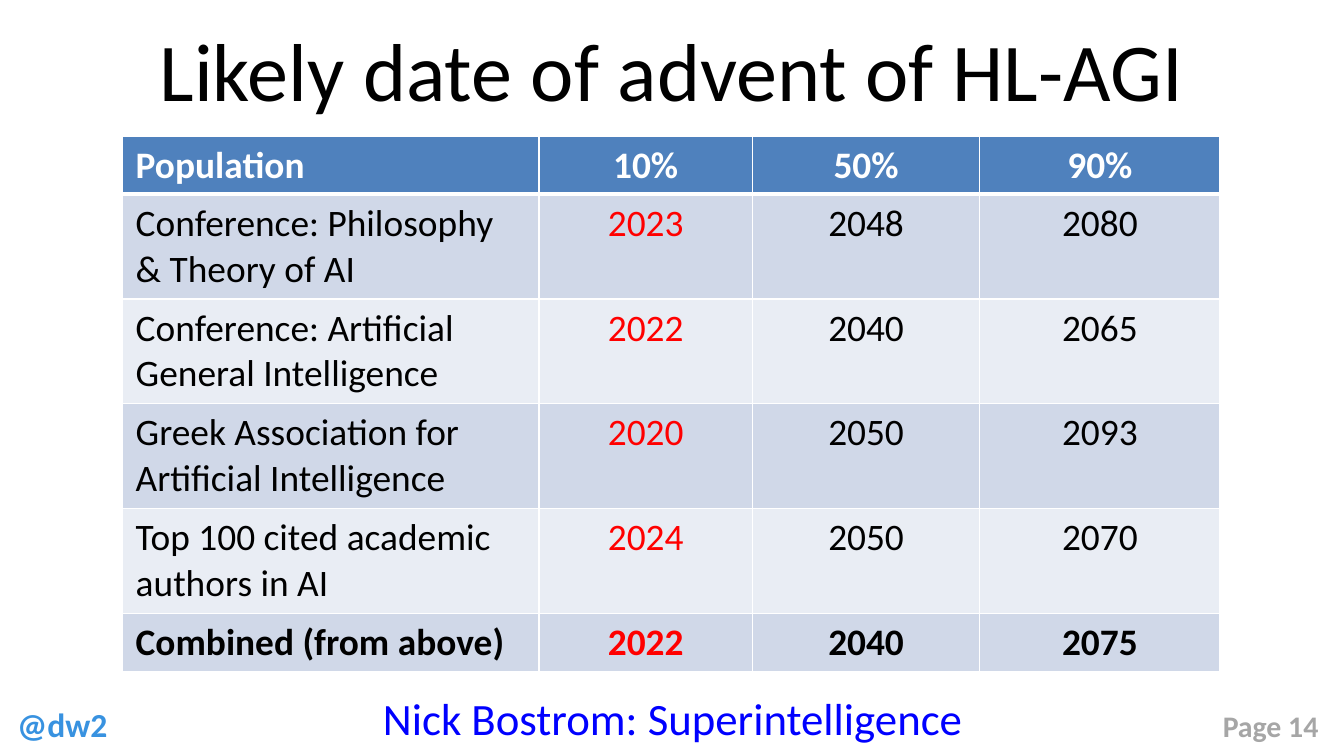
"""Build a slide with a table of expected HL-AGI dates."""
from dataclasses import dataclass

from lxml.etree import SubElement as Sub
from pptx import Presentation
from pptx.dml.color import RGBColor as Rgb
from pptx.enum.text import MSO_ANCHOR as Anchor, MSO_AUTO_SIZE as Fit, PP_ALIGN as Align
from pptx.oxml.ns import qn
from pptx.util import Inches, Pt

HUES = {
    "white": "FFFFFF", "black": "000000", "red": "FF0000", "blue": "0000FF",
    "sky": "3892E0", "gray": "A6A6A6", "head": "4F81BD", "dark": "D0D8E8",
    "light": "E9EDF4",
}


@dataclass(frozen=True)
class Style:
    size: int
    hue: str
    bold: bool = False
    align: Align = Align.LEFT


@dataclass(frozen=True)
class Label:
    text: str
    box: tuple[float, float, float, float]
    style: Style
    frame: dict


GROW = {"word_wrap": True, "auto_size": Fit.SHAPE_TO_FIT_TEXT}
TIGHT = GROW | {"word_wrap": False}
TITLE = {"word_wrap": True, "vertical_anchor": Anchor.MIDDLE}

LABELS = [
    Label("@dw2", (0.03, 5.19, 0.88, 0.4), Style(18, "sky", True), TIGHT),
    Label("Page 14", (9, 5.22, 0.96, 0.37), Style(16, "gray", True), TIGHT),
    Label("Likely date of advent of HL-AGI", (0.5, 0.04, 9, 0.94),
          Style(44, "black", align=Align.CENTER), TITLE),
    Label("Nick Bostrom: Superintelligence", (2.61, 5.09, 4.79, 0.5),
          Style(24, "blue", align=Align.CENTER), GROW),
]

WIDE = 10
BOX = (0.91, 1.01, 8.17, 3.93)
COLS = (3.1, 1.59, 1.69, 1.79)
ROWS = [
    ("Population", "10%", "50%", "90%"),
    ("Conference: Philosophy & Theory of AI", "2023", "2048", "2080"),
    ("Conference: Artificial General Intelligence", "2022", "2040", "2065"),
    ("Greek Association for Artificial Intelligence", "2020", "2050", "2093"),
    ("Top 100 cited academic authors in AI", "2024", "2050", "2070"),
    ("Combined (from above)", "2022", "2040", "2075"),
]
LAST = len(ROWS) - 1


def apply(target, values: dict) -> None:
    """Set each named value on the target."""
    for name, value in values.items():
        setattr(target, name, value)


def write(frame, text: str, style: Style) -> None:
    """Write one styled line of text."""
    para = frame.paragraphs[0]
    para.alignment = style.align
    run = para.add_run()
    run.text = text
    apply(run.font, {"name": "Calibri", "size": Pt(style.size), "bold": style.bold})
    run.font.color.rgb = Rgb.from_string(HUES[style.hue])


def draw_label(slide, label: Label) -> None:
    """Draw a text box."""
    frame = slide.shapes.add_textbox(*map(Inches, label.box)).text_frame
    apply(frame, label.frame)
    write(frame, label.text, label.style)


def cell_style(row: int, col: int) -> Style:
    """Choose the text style of a table cell."""
    hue = "white" if row == 0 else "red" if col == 1 else "black"
    return Style(20, hue, row in (0, LAST), Align.CENTER if col else Align.LEFT)


def edge(cell, row: int) -> None:
    """Draw white cell borders, thick below the header."""
    props = cell._tc.get_or_add_tcPr()
    thick = {(0, "B"), (1, "T")}
    for side in "LRTB":
        width = Pt(3 if (row, side) in thick else 1)
        line = Sub(props, qn(f"a:ln{side}"), w=str(width))
        Sub(Sub(line, qn("a:solidFill")), qn("a:srgbClr"), val=HUES["white"])


def draw_table(slide) -> None:
    """Draw the table of dates."""
    table = slide.shapes.add_table(len(ROWS), len(COLS), *map(Inches, BOX)).table
    for col, width in zip(table.columns, COLS):
        col.width = Inches(width)
    for i, texts in enumerate(ROWS):
        table.rows[i].height = Inches(0.43 if i in (0, LAST) else 0.78)
        fill = "head" if i == 0 else "dark" if i % 2 else "light"
        for j, text in enumerate(texts):
            cell = table.cell(i, j)
            edge(cell, i)
            cell.fill.solid()
            cell.fill.fore_color.rgb = Rgb.from_string(HUES[fill])
            write(cell.text_frame, text, cell_style(i, j))


def main() -> None:
    """Build and save the deck."""
    deck = Presentation()
    apply(deck, {"slide_width": Inches(WIDE), "slide_height": Inches(WIDE * 9 / 16)})
    slide = deck.slides.add_slide(deck.slide_layouts[6])
    for label in LABELS:
        draw_label(slide, label)
    draw_table(slide)
    deck.save("out.pptx")


if __name__ == "__main__":
    main()
